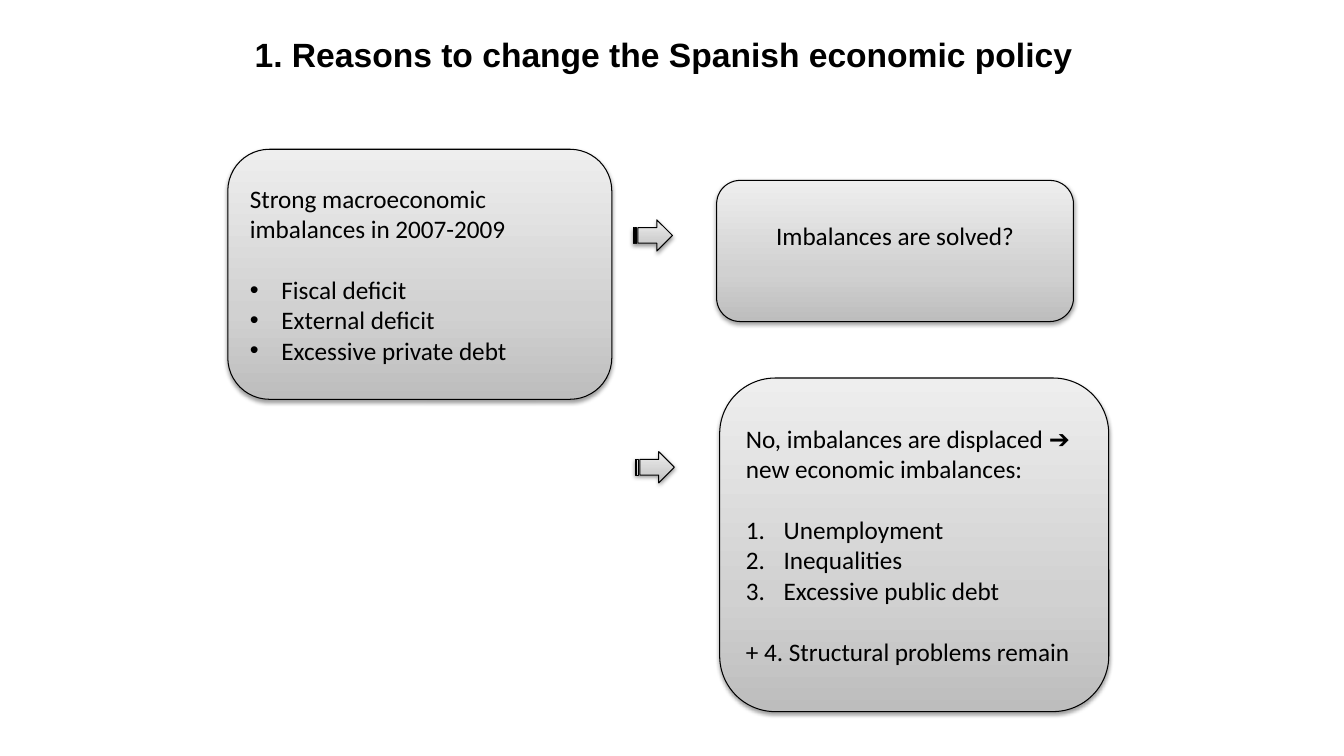
"""Build the slide on the reasons to change the Spanish economic policy."""
from dataclasses import dataclass

from lxml import etree
from pptx import Presentation
from pptx.dml.color import RGBColor
from pptx.enum import shapes, text
from pptx.oxml import parse_xml
from pptx.oxml.ns import nsdecls, qn
from pptx.util import Pt


@dataclass(frozen=True)
class Theme:
    """Colours, fonts and type sizes."""
    ink: str = "000000"
    gradient: tuple = ((0, "BDBDBD"), (35, "D1D1D1"), (100, "EEEEEE"))
    title_font: str = "Arial"
    body_font: str = "Calibri"
    title_size: float = 24
    body_size: float = 18
    blank_line: float = 22
    line_width: float = 0.75


class Deck:
    """Holds the theme and the current slide."""

    def __init__(self, theme, width, height):
        """Start a presentation with one title-only slide."""
        self.theme = theme
        self.prs = Presentation()
        self.prs.slide_width, self.prs.slide_height = Pt(width), Pt(height)
        self.s = self.prs.slides.add_slide(self.prs.slide_layouts[5])

    def font(self, p, name, size, bold=False):
        """Format every run of a paragraph."""
        for r in p.runs:
            r.font.name, r.font.size, r.font.bold = name, Pt(size), bold
            r.font.color.rgb = RGBColor.from_string(self.theme.ink)

    def indent(self, p, left, first):
        """Set the left margin and first-line indent of a paragraph."""
        pPr = p._p.get_or_add_pPr()
        pPr.set("marL", str(Pt(left)))
        pPr.set("indent", str(Pt(first)))
        return pPr

    def title(self, label, x, y, w, h):
        """Place and format the title."""
        sp = self.s.shapes.title
        sp.left, sp.top, sp.width, sp.height = Pt(x), Pt(y), Pt(w), Pt(h)
        tf = sp.text_frame
        tf.text = label
        tf.word_wrap = True
        tf.auto_size = text.MSO_AUTO_SIZE.NONE
        tf.vertical_anchor = text.MSO_ANCHOR.TOP
        p = tf.paragraphs[0]
        p.alignment = text.PP_ALIGN.LEFT
        self.indent(p, 13.5, -1.5)
        self.font(p, self.theme.title_font, self.theme.title_size, True)

    def shape(self, kind, x, y, w, h):
        """Add a shape with grey gradient, thin outline and soft shadow."""
        sp = self.s.shapes.add_shape(kind, Pt(x), Pt(y), Pt(w), Pt(h))
        sp.line.color.rgb = RGBColor.from_string(self.theme.ink)
        sp.line.width = Pt(self.theme.line_width)
        sp.shadow.inherit = False
        spPr = sp._element.spPr
        stops = "".join(
            f'<a:gs pos="{pos * 1000}"><a:srgbClr val="{color}"/></a:gs>'
            for pos, color in self.theme.gradient)
        spPr.find(qn("a:ln")).addprevious(parse_xml(
            f'<a:gradFill {nsdecls("a")} rotWithShape="1"><a:gsLst>{stops}</a:gsLst>'
            '<a:lin ang="16200000" scaled="0"/></a:gradFill>'))
        spPr.find(qn("a:effectLst")).append(parse_xml(
            f'<a:outerShdw {nsdecls("a")} blurRad="{Pt(3.1)}" dist="{Pt(1.6)}"'
            f' dir="5400000" rotWithShape="0"><a:srgbClr val="{self.theme.ink}">'
            '<a:alpha val="38000"/></a:srgbClr></a:outerShdw>'))
        return sp

    def arrow(self, x, y):
        """Add a striped right arrow."""
        self.shape(shapes.MSO_SHAPE.STRIPED_RIGHT_ARROW, x, y, 28.1, 22.3)

    def box(self, x, y, w, h, lead, items=(), numbered=False, closing=None):
        """Add a rounded box with a lead, an optional list and a closing line."""
        sp = self.shape(shapes.MSO_SHAPE.ROUNDED_RECTANGLE, x, y, w, h)
        tf = sp.text_frame
        lines = [lead, *items] + ([closing] if closing else [])
        tf.text = "\n".join(lines)
        tf.word_wrap = True
        tf.vertical_anchor = text.MSO_ANCHOR.MIDDLE
        for i, p in enumerate(tf.paragraphs):
            p.alignment = text.PP_ALIGN.LEFT
            self.font(p, self.theme.body_font, self.theme.body_size)
            if i == 1 or i > len(items):
                p.space_before = Pt(self.theme.blank_line)
            if 1 <= i <= len(items):
                self.bullet(p, numbered)
        return tf

    def bullet(self, p, numbered):
        """Give a paragraph a number or a round bullet."""
        hang = 27 if numbered else 22.5
        pPr = self.indent(p, hang, -hang)
        if numbered:
            etree.SubElement(pPr, qn("a:buFont"), typeface="+mj-lt")
            etree.SubElement(pPr, qn("a:buAutoNum"), type="arabicPeriod")
        else:
            etree.SubElement(pPr, qn("a:buFont"), typeface="Arial")
            etree.SubElement(pPr, qn("a:buChar"), char="•")

    def question(self, x, y, w, h, label):
        """Add a box with one centred line, raised by half a line."""
        tf = self.box(x, y, w, h, label)
        tf.paragraphs[0].alignment = text.PP_ALIGN.CENTER
        tf.margin_bottom = Pt(3.6 + self.theme.blank_line)


def main():
    """Build and save the slide."""
    deck = Deck(Theme(), 960, 540)
    deck.title("1. Reasons to change the Spanish economic policy", 162.7, 20.9, 632.2, 56.9)
    deck.box(162.7, 106.6, 274.3, 178.6, "Strong macroeconomic imbalances in 2007-2009",
             ("Fiscal deficit", "External deficit", "Excessive private debt"))
    deck.arrow(452.2, 157)
    deck.question(511.9, 128.9, 254.9, 100.8, "Imbalances are solved?")
    deck.box(514.1, 270, 277.9, 238.3,
             "No, imbalances are displaced ➔ new economic imbalances:",
             ("Unemployment", "Inequalities", "Excessive public debt"),
             numbered=True, closing="+ 4. Structural problems remain")
    deck.arrow(453.6, 322.6)
    deck.prs.save("out.pptx")


if __name__ == "__main__":
    main()
